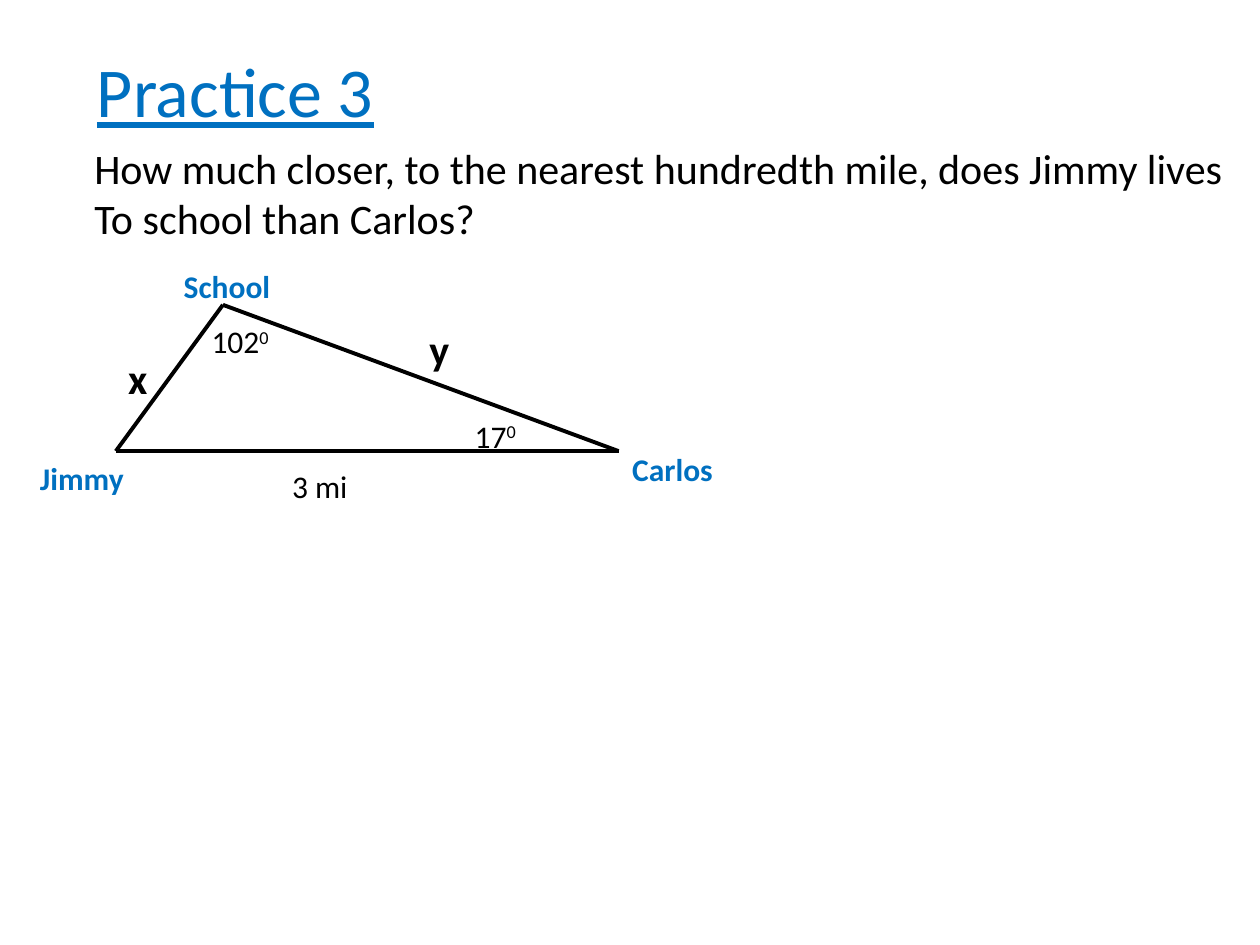
"""Build a practice slide with a labelled triangle between school and two homes."""
from itertools import combinations

from lxml.etree import SubElement
from pptx import Presentation
from pptx.dml.color import RGBColor
from pptx.enum.shapes import MSO_CONNECTOR
from pptx.enum.text import MSO_ANCHOR, MSO_AUTO_SIZE, PP_ALIGN
from pptx.oxml.ns import qn
from pptx.util import Pt

BLUE, BLACK = "0070C0", "000000"
TITLE = "Practice 3"
TITLE_BOX = (48.2, 23.8, 174.2, 55.4)
QUESTION = [
    "How much closer, to the nearest hundredth mile, does Jimmy lives",
    "To school than Carlos?",
]
QUESTION_BOX = (46.8, 77.8, 660.2, 65.5)
CORNERS = {"School": (127.4, 174.2), "Jimmy": (66.2, 257.8), "Carlos": (353.5, 257.8)}
MEASURES = [
    ("102^0", (113.8, 180.7, 48.2, 28.8)),
    ("17^0", (264.2, 234.7, 38.9, 28.8)),
    ("3 mi", (159.8, 263.5, 46.8, 28.8)),
]
PLACES = [
    ("Carlos", (354.2, 253.4, 61.2, 28.8)),
    ("Jimmy", (15.8, 258.5, 62.6, 28.8)),
    ("School", (97.9, 149, 64.1, 28.8)),
]
UNKNOWNS = [("x", (66.2, 198, 25.9, 36)), ("y", (238.3, 181.4, 25.9, 36))]


def rgb(code):
    """Turn a hex string into a colour."""
    return RGBColor.from_string(code)


def write(slide, lines, box, size=18, color=BLACK, bold=False, underline=False, holder=None):
    """Write lines in a text box or given placeholder; a caret starts a superscript."""
    left, top, width, height = map(Pt, box)
    holder = holder or slide.shapes.add_textbox(left, top, width, height)
    holder.left, holder.top, holder.width, holder.height = left, top, width, height
    frame = holder.text_frame
    frame.word_wrap = False
    frame.auto_size = MSO_AUTO_SIZE.SHAPE_TO_FIT_TEXT
    frame.vertical_anchor = MSO_ANCHOR.TOP
    for index, line in enumerate(lines):
        paragraph = frame.add_paragraph() if index else frame.paragraphs[0]
        paragraph.alignment = PP_ALIGN.LEFT
        for level, part in enumerate(line.split("^")):
            run = paragraph.add_run()
            run.text = part
            font = run.font
            font.name, font.size = "Calibri", Pt(size)
            font.bold, font.underline = bold, underline
            font.color.rgb = rgb(color)
            if level:
                run._r.get_or_add_rPr().set("baseline", "30000")


def draw_side(slide, start, end):
    """Draw one side of the triangle."""
    side = slide.shapes.add_connector(MSO_CONNECTOR.STRAIGHT, *map(Pt, start + end))
    side.line.color.rgb = rgb(BLACK)
    side.line.width = Pt(2.25)
    SubElement(side._element.spPr, qn("a:effectLst"))


def main():
    """Assemble and save the slide."""
    deck = Presentation()
    deck.slide_width, deck.slide_height = Pt(720), Pt(540)
    slide = deck.slides.add_slide(deck.slide_layouts[5])
    write(slide, [TITLE], TITLE_BOX, size=40, color=BLUE, underline=True,
          holder=slide.shapes.title)
    write(slide, QUESTION, QUESTION_BOX, size=24)
    for start, end in combinations(CORNERS.values(), 2):
        draw_side(slide, start, end)
    for labels, style in (
        (MEASURES, {}),
        (PLACES, {"color": BLUE, "bold": True}),
        (UNKNOWNS, {"size": 24, "bold": True}),
    ):
        for label, box in labels:
            write(slide, [label], box, **style)
    deck.save("out.pptx")


if __name__ == "__main__":
    main()
